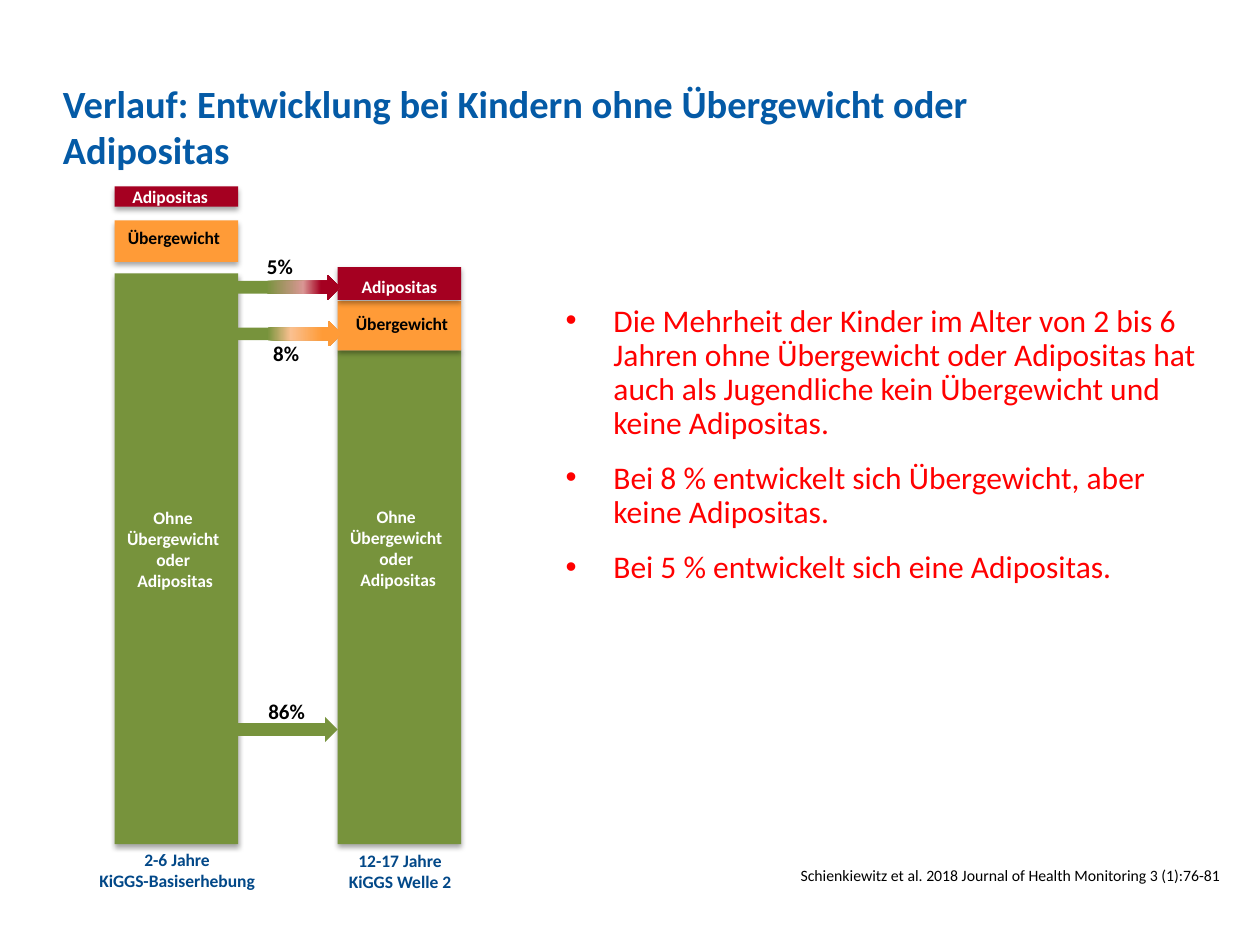
from copy import deepcopy

from pptx import Presentation
from pptx.dml.color import RGBColor as Rgb
from pptx.enum.shapes import MSO_SHAPE as Shape
from pptx.enum.text import MSO_ANCHOR as Anchor, PP_ALIGN as Align
from pptx.oxml import parse_xml
from pptx.oxml.ns import nsdecls, qn
from pptx.util import Inches, Pt

BLUE = Rgb(0x04, 0x5A, 0xA6)
NAVY = Rgb(0x02, 0x48, 0x88)
GREEN = Rgb(0x77, 0x93, 0x3C)
RED = Rgb(0xA5, 0x00, 0x21)
ROSE = Rgb(0xD9, 0x96, 0x94)
AMBER = Rgb(0xFF, 0x9B, 0x37)
PEACH = Rgb(0xFA, 0xC0, 0x90)
BRIGHT = Rgb(0xFF, 0x00, 0x00)
WHITE = Rgb(0xFF, 0xFF, 0xFF)
BLACK = Rgb(0x00, 0x00, 0x00)

BAR = 0.98  # bar width
FAT, OVER = ["Adipositas"], ["Übergewicht"]
NONE = ["Ohne ", "Übergewicht ", "oder ", "Adipositas"]


def write(slide, box, lines, size, color, bold=False, align=Align.CENTER,
          anchor=Anchor.MIDDLE, wrap=True):
    frame = slide.shapes.add_textbox(*map(Inches, box)).text_frame
    frame.word_wrap = wrap
    frame.vertical_anchor = anchor
    for i, line in enumerate(lines):
        para = frame.add_paragraph() if i else frame.paragraphs[0]
        para.alignment = align
        run = para.add_run()
        run.text = line
        font = run.font
        font.name, font.size, font.bold = "Calibri", Pt(size), bold
        font.color.rgb = color
    return frame


def draw(slide, kind, box, color):
    shape = slide.shapes.add_shape(kind, *map(Inches, box))
    shape.shadow.inherit = False
    shape.line.fill.background()
    shape.fill.solid()
    shape.fill.fore_color.rgb = color
    return shape


def shade(shape):
    fx = shape._element.spPr.find(qn("a:effectLst"))
    fx.append(parse_xml(
        f'<a:outerShdw {nsdecls("a")} blurRad="39370" dist="22860" '
        'dir="5400000" rotWithShape="0"><a:srgbClr val="000000">'
        '<a:alpha val="35000"/></a:srgbClr></a:outerShdw>'))


def blend(shape, stops):
    fill = shape.fill
    fill.gradient()
    fill.gradient_angle = 0
    marks = shape._element.spPr.find(qn("a:gradFill")).find(qn("a:gsLst"))
    marks.append(deepcopy(marks[-1]))
    for mark, (spot, color) in zip(fill.gradient_stops, stops):
        mark.position = spot
        mark.color.rgb = color


def title(slide, box):
    frame = write(
        slide, box,
        ["Verlauf: Entwicklung bei Kindern ohne Übergewicht oder Adipositas"],
        22, BLUE, True, Align.LEFT)
    frame.margin_left = frame.margin_right = 0
    frame.margin_top = frame.margin_bottom = 0


def stack(slide, left, top, parts):
    """Bars of one age group: offset, height, fill, lines, ink, label shift."""
    for y, high, color, *_ in parts:
        shade(draw(slide, Shape.RECTANGLE, (left, top + y, BAR, high), color))
    for y, high, _, lines, ink, dx, dy in parts:
        tall = 0.78 if len(lines) > 1 else 0.31
        spot = top + y + (high - tall) / 2 + dy
        write(slide, (left + dx, spot, 0.96, tall), lines, 10, ink, True,
              wrap=False)


def flow(slide, left, top, stops, label, box):
    """Arrow between the stacks, with its share."""
    arrow = draw(slide, Shape.RIGHT_ARROW, (left, top, 0.84, 0.2), GREEN)
    if stops:
        blend(arrow, stops)
    dx, dy, wide, high = box
    write(slide, (left + dx, top + dy, wide, high), [label], 12, BLACK, True)


def chart(slide, left, top):
    right = left + 1.77
    # Age groups
    stack(slide, left, top, [
        (0.69, 4.53, GREEN, NONE, WHITE, 0, -0.08),
        (0, 0.16, RED, FAT, WHITE, -0.04, 0),
        (0.27, 0.33, AMBER, OVER, BLACK, -0.01, -0.03)])
    stack(slide, right, top, [
        (1.3, 3.92, GREEN, NONE, WHITE, 0, -0.39),
        (0.91, 0.39, AMBER, OVER, BLACK, 0.03, -0.02),
        (0.64, 0.26, RED, FAT, WHITE, 0.01, 0.02)])
    # Transitions
    start = left + BAR
    flow(slide, start - 0.05, top + 4.21, None, "86%", (0, -0.36, 0.87, 0.63))
    flow(slide, start - 0.03, top + 0.7,
         [(0.3, GREEN), (0.65, ROSE), (0.82, RED)],
         "5% ", (-0.03, -0.32, 0.82, 0.51))
    flow(slide, start - 0.02, top + 1.07,
         [(0.3, GREEN), (0.52, PEACH), (0.82, AMBER)],
         "8% ", (0.01, 0, 0.82, 0.51))
    # Survey names
    for x, y, wide, lines in [
            (left - 0.24, 5.21, 1.47, ["2-6 Jahre", "KiGGS-Basiserhebung"]),
            (right - 0.17, 5.22, 1.33, ["12-17 Jahre", "KiGGS Welle 2"])]:
        write(slide, (x, top + y, wide, 0.44), lines, 10, NAVY, True,
              anchor=Anchor.TOP)


def points(slide, box):
    frame = write(slide, box, [
        "Die Mehrheit der Kinder im Alter von 2 bis 6 Jahren ohne Übergewicht "
        "oder Adipositas hat auch als Jugendliche kein Übergewicht und keine "
        "Adipositas.",
        "Bei 8 % entwickelt sich Übergewicht, aber keine Adipositas.",
        "Bei 5 % entwickelt sich eine Adipositas."],
        18, BRIGHT, align=Align.LEFT, anchor=Anchor.TOP)
    for i, para in enumerate(frame.paragraphs):
        props = para._p.get_or_add_pPr()
        props.set("marL", str(Inches(0.38)))
        props.set("indent", str(-Inches(0.38)))
        props.append(parse_xml(f'<a:buFont {nsdecls("a")} typeface="Arial"/>'))
        props.append(parse_xml(f'<a:buChar {nsdecls("a")} char="•"/>'))
        para.line_spacing = 0.9
        para.space_before = Pt(12 if i else 0)


def cite(slide, box):
    write(slide, box,
          ["Schienkiewitz et al. 2018 Journal of Health Monitoring 3 (1):76-81"],
          9, BLACK, align=Align.RIGHT, anchor=Anchor.TOP)


def main():
    deck = Presentation()
    deck.slide_width, deck.slide_height = Inches(10), Inches(7.5)
    slide = deck.slides.add_slide(deck.slide_layouts[6])
    title(slide, (0.5, 0.52, 7.84, 0.96))
    chart(slide, 0.91, 1.48)
    points(slide, (4.39, 2.37, 5.22, 2.79))
    cite(slide, (6.04, 6.82, 3.74, 0.25))
    deck.save("out.pptx")


if __name__ == "__main__":
    main()
